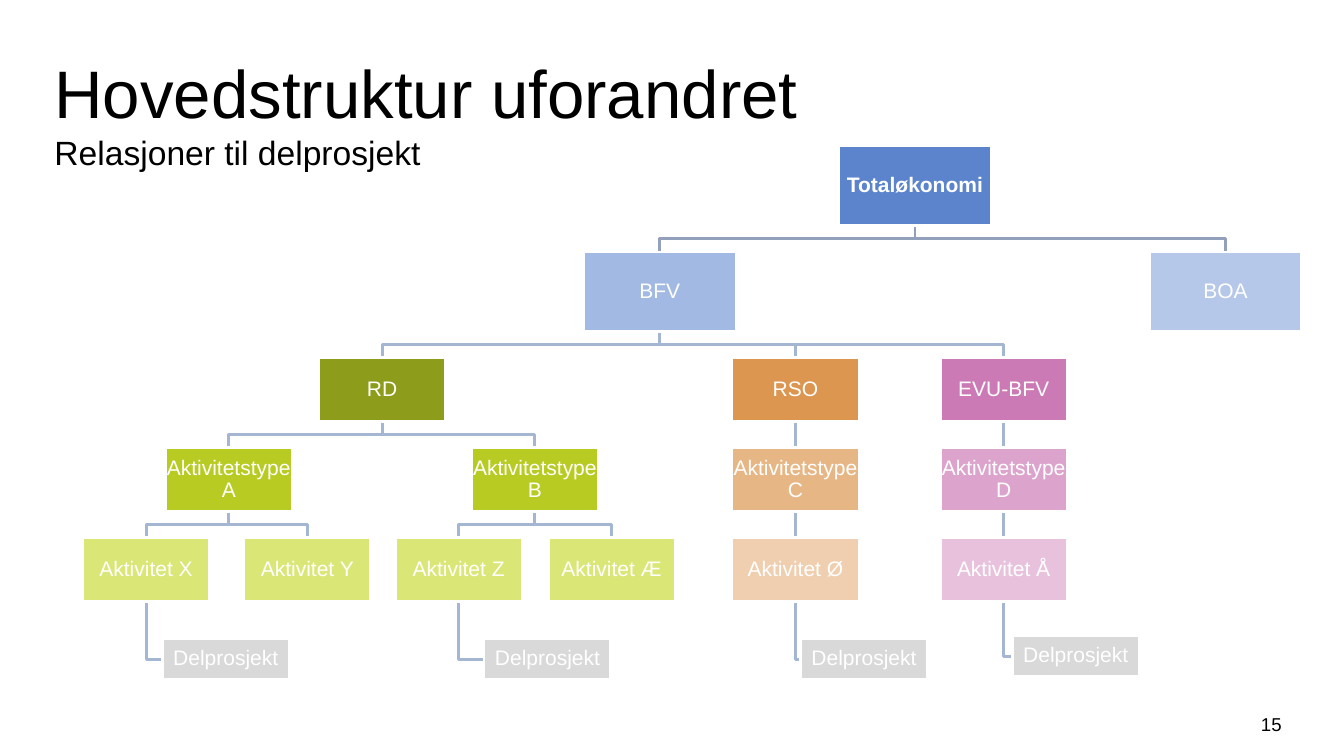
from dataclasses import dataclass

from lxml import etree
from pptx import Presentation
from pptx.dml.color import RGBColor
from pptx.enum.shapes import MSO_CONNECTOR, MSO_SHAPE
from pptx.enum.text import MSO_ANCHOR, MSO_AUTO_SIZE, PP_ALIGN
from pptx.oxml.ns import qn
from pptx.util import Inches, Pt

RECTANGLE = MSO_SHAPE.RECTANGLE
STRAIGHT = MSO_CONNECTOR.STRAIGHT
MIDDLE, BOTTOM = MSO_ANCHOR.MIDDLE, MSO_ANCHOR.BOTTOM
LEFT, CENTER = PP_ALIGN.LEFT, PP_ALIGN.CENTER
GROW = MSO_AUTO_SIZE.SHAPE_TO_FIT_TEXT
TITLE_ONLY = 5
TOP_SIDE, BOTTOM_SIDE = 0, 2


@dataclass(frozen=True)
class Theme:
    """Colours, font and type sizes of the slide."""
    font: str = "Arial"
    ink: str = "000000"
    paper: str = "FFFFFF"
    top_line: str = "92A0BB"
    line: str = "A5B6D3"
    subproject: str = "D9D9D9"
    total: str = "5B84CD"
    bfv: str = "A1B9E3"
    boa: str = "B6C8E9"
    greens: tuple = ("8D9C1B", "B7CB23", "DAE777")
    oranges: tuple = ("DC9650", "E7B685", "EFCFAF")
    pinks: tuple = ("CC7AB5", "DCA4CC", "E8C2DD")
    title: float = 48
    subtitle: float = 24
    label: float = 15
    number: float = 13.3
    stroke: float = 2


@dataclass(frozen=True)
class Box:
    """A region of the slide that hands out shares of itself in percent."""
    left: float
    top: float
    width: float
    height: float

    def x(self, share):
        """Return the position at a share of the width."""
        return int(self.left + self.width * share / 100)

    def y(self, share):
        """Return the position at a share of the height."""
        return int(self.top + self.height * share / 100)

    def region(self, left, top, width, height):
        """Return a region inside this one."""
        return Box(self.x(left), self.y(top), int(self.width * width / 100), int(self.height * height / 100))

    def place(self):
        """Return left, top, width and height."""
        return self.left, self.top, self.width, self.height


@dataclass(frozen=True)
class Node:
    """A unit of the chart; subproject holds its indent and lift."""
    label: str
    center: float
    fill: str
    children: tuple = ()
    subproject: tuple = ()


THEME = Theme()
TIER_HEIGHTS = (14.93, 14.93, 11.95, 11.95, 11.95)
TIER_WIDTHS = (12.49, 12.49, 10.42, 10.42, 10.42)
TIER_GAP = 4.93
SUBPROJECT_WIDTH, SUBPROJECT_HEIGHT = 10.42, 7.56

GREEN, LIME, PALE_LIME = THEME.greens
ORANGE, LIGHT_ORANGE, PALE_ORANGE = THEME.oranges
PINK, LIGHT_PINK, PALE_PINK = THEME.pinks
RD = Node("RD", 24.57, GREEN, (
    Node("Aktivitetstype A", 11.99, LIME, (
        Node("Aktivitet X", 5.21, PALE_LIME, subproject=(1.32, 0)),
        Node("Aktivitet Y", 18.44, PALE_LIME))),
    Node("Aktivitetstype B", 37.1, LIME, (
        Node("Aktivitet Z", 30.85, PALE_LIME, subproject=(2.07, 0)),
        Node("Aktivitet Æ", 43.4, PALE_LIME)))))
RSO = Node("RSO", 58.48, ORANGE, (
    Node("Aktivitetstype C", 58.48, LIGHT_ORANGE, (
        Node("Aktivitet Ø", 58.48, PALE_ORANGE, subproject=(0.41, 0)),)),))
EVU = Node("EVU-BFV", 75.56, PINK, (
    Node("Aktivitetstype D", 75.56, LIGHT_PINK, (
        Node("Aktivitet Å", 75.56, PALE_PINK, subproject=(0.7, 0.57)),)),))
TOTAL = Node("Totaløkonomi", 68.28, THEME.total, (
    Node("BFV", 47.35, THEME.bfv, (RD, RSO, EVU)),
    Node("BOA", 93.76, THEME.boa)))


def color(value):
    """Return the colour for a hex value."""
    return RGBColor.from_string(value)


def format_run(run, size, tone, bold=False):
    """Set the font of a run."""
    run.font.name = THEME.font
    run.font.size = Pt(size)
    run.font.color.rgb = color(tone)
    run.font.bold = bold


def add_title(slide, box):
    """Fill the title placeholder with the heading and its second line."""
    title = slide.shapes.title
    title.left, title.top, title.width, title.height = box.place()
    frame = title.text_frame
    frame.text = "Hovedstruktur uforandret\vRelasjoner til delprosjekt"
    frame.vertical_anchor = BOTTOM
    frame.auto_size = GROW
    paragraph = frame.paragraphs[0]
    paragraph.alignment = LEFT
    for run, size in zip(paragraph.runs, (THEME.title, THEME.subtitle)):
        format_run(run, size, THEME.ink)


def add_slide_number(slide, box):
    """Write the slide number."""
    frame = slide.shapes.add_textbox(*box.place()).text_frame
    frame.word_wrap = True
    frame.text = "15"
    paragraph = frame.paragraphs[0]
    paragraph.alignment = CENTER
    format_run(paragraph.runs[0], THEME.number, THEME.ink)


def add_unit(slide, box, label, fill, bold=False):
    """Draw one labelled rectangle."""
    shape = slide.shapes.add_shape(RECTANGLE, *box.place())
    shape.shadow.inherit = False
    shape.fill.solid()
    shape.fill.fore_color.rgb = color(fill)
    shape.line.color.rgb = color(THEME.paper)
    shape.line.width = Pt(THEME.stroke)
    frame = shape.text_frame
    frame.margin_left = frame.margin_right = frame.margin_top = frame.margin_bottom = 0
    frame.word_wrap = True
    frame.vertical_anchor = MIDDLE
    frame.text = label
    paragraph = frame.paragraphs[0]
    paragraph.alignment = CENTER
    paragraph.line_spacing = 0.9
    format_run(paragraph.runs[0], THEME.label, THEME.paper, bold)
    return shape


def style_line(line, tone, parent):
    """Colour a line and put it behind its parent unit."""
    line.line.color.rgb = color(tone)
    line.line.width = Pt(THEME.stroke)
    parent.element.addprevious(line.element)


def add_bent_line(slide, points, tone, parent):
    """Draw an open bent line through the points."""
    builder = slide.shapes.build_freeform(*points[0])
    builder.add_line_segments(points[1:], close=False)
    bent_line = builder.convert_to_shape()
    bent_line.shadow.inherit = False
    bent_line.fill.background()
    style_line(bent_line, tone, parent)


def join_units(slide, parent, child, tone):
    """Link a unit to one below it, bending halfway if they are not aligned."""
    start_x, start_y = parent.left + parent.width // 2, parent.top + parent.height
    end_x, end_y = child.left + child.width // 2, child.top
    if abs(start_x - end_x) > Pt(1):
        middle = (start_y + end_y) // 2
        points = [(start_x, start_y), (start_x, middle), (end_x, middle), (end_x, end_y)]
        add_bent_line(slide, points, tone, parent)
        return
    connector = slide.shapes.add_connector(STRAIGHT, start_x, start_y, end_x, end_y)
    connector.begin_connect(parent, BOTTOM_SIDE)
    connector.end_connect(child, TOP_SIDE)
    style_line(connector, tone, parent)
    etree.SubElement(connector.element.spPr, qn("a:effectLst"))


def add_subproject(slide, box, node, parent):
    """Hang a subproject to the lower right of its activity."""
    indent, lift = node.subproject
    top = 100 - SUBPROJECT_HEIGHT - lift
    place = box.region(node.center + indent, top, SUBPROJECT_WIDTH, SUBPROJECT_HEIGHT)
    child = add_unit(slide, place, "Delprosjekt", THEME.subproject)
    x, y = box.x(node.center), child.top + child.height // 2
    add_bent_line(slide, [(x, parent.top + parent.height), (x, y), (child.left, y)], THEME.line, parent)


def add_branch(slide, box, node, tier=0):
    """Draw a unit and everything below it."""
    width, height = TIER_WIDTHS[tier], TIER_HEIGHTS[tier]
    top = sum(TIER_HEIGHTS[:tier]) + tier * TIER_GAP
    place = box.region(node.center - width / 2, top, width, height)
    shape = add_unit(slide, place, node.label, node.fill, bold=tier == 0)
    for child in node.children:
        tone = THEME.line if tier else THEME.top_line
        join_units(slide, shape, add_branch(slide, box, child, tier + 1), tone)
    if node.subproject:
        add_subproject(slide, box, node, shape)
    return shape


def main():
    """Build and save the slide."""
    presentation = Presentation()
    presentation.slide_width, presentation.slide_height = Inches(13.33), Inches(7.5)
    slide = presentation.slides.add_slide(presentation.slide_layouts[TITLE_ONLY])
    page = Box(0, 0, presentation.slide_width, presentation.slide_height)
    add_title(slide, page.region(3.3, 5.87, 92.12, 17.6))
    add_branch(slide, page.region(6.15, 19.33, 90.7, 70.53), TOTAL)
    add_slide_number(slide, page.region(92.72, 93.6, 3.75, 5.33))
    presentation.save("out.pptx")


if __name__ == "__main__":
    main()
